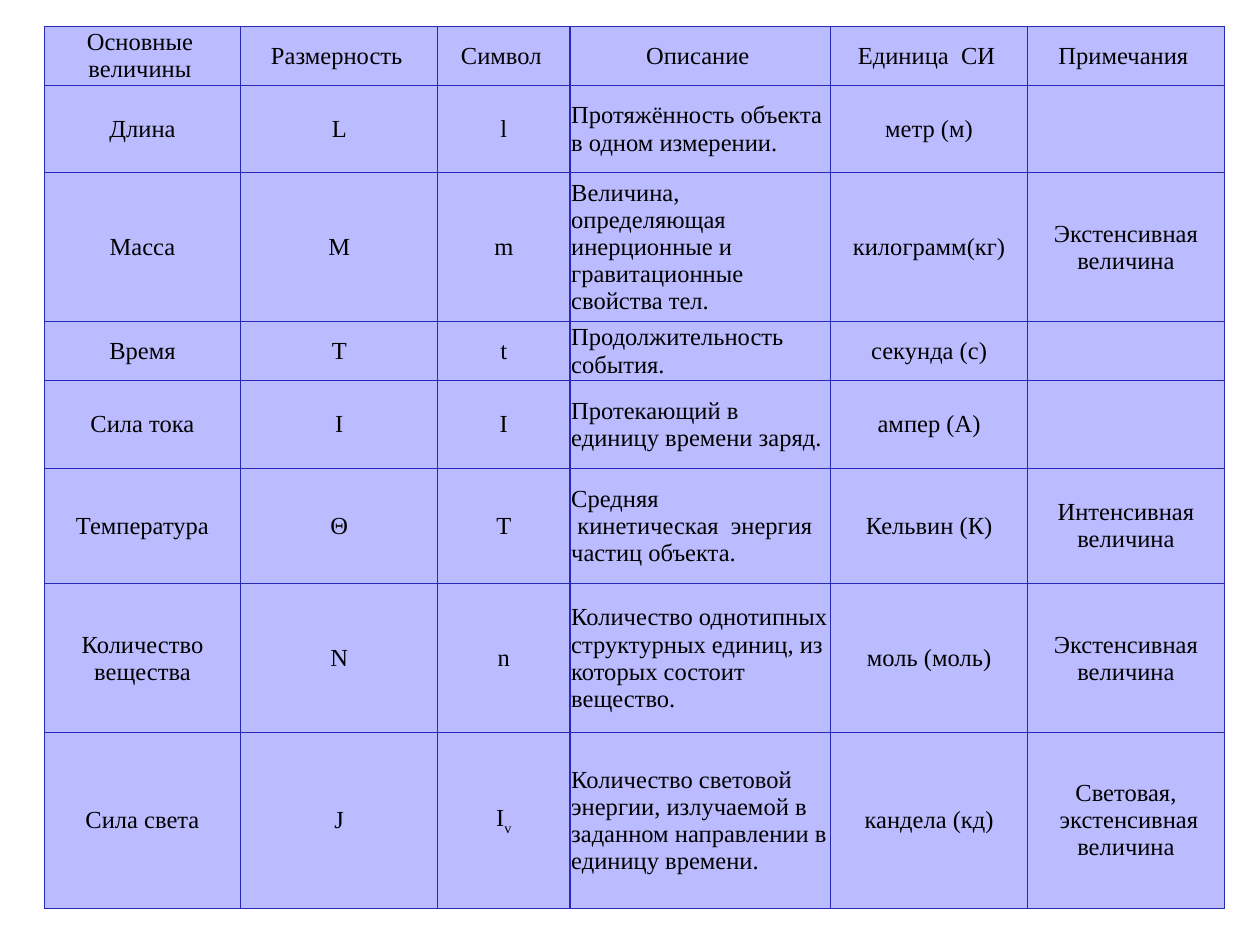
from dataclasses import dataclass

from lxml import etree
from pptx import Presentation
from pptx import util as u
from pptx.dml.color import RGBColor
from pptx.enum import text
from pptx.oxml import ns

SLIDE_WIDTH, SLIDE_HEIGHT = u.Inches(10), u.Inches(7.5)
COLORS = {"cell": "BBBBFF", "border": "2929B8", "text": "000000"}
FONT, FONT_SIZE = "Times New Roman", u.Pt(14)
BORDER_WIDTH = u.Pt(0.75)
MARGIN, HEADER_RIGHT_MARGIN = u.Inches(0.01), u.Inches(0.05)

# Shares of the slide, in percent
TABLE_LEFT, TABLE_TOP = 3.5, 2.8
COLUMN_SHARES = (15.62, 15.62, 10.5, 20.7, 15.62, 15.62)
DESCRIPTION_COLUMN = 3
SYMBOL_COLUMN = 2


@dataclass
class Quantity:
    height_share: float
    name: str
    dimension: str
    symbol: str
    description: str
    unit: str
    note: str = ""
    subscript: str = ""

    def texts(self) -> tuple:
        return (self.name, self.dimension, self.symbol,
                self.description, self.unit, self.note)


# Header, then the seven base quantities; a line break starts a paragraph
QUANTITIES = [
    Quantity(6.25, "Основные величины", "Размерность", "Символ", "Описание",
             "Единица  СИ", "Примечания"),
    Quantity(9.25, "Длина", "L", "l",
             "Протяжённость объекта в одном измерении.", "метр (м)"),
    Quantity(15.75, "Масса", "M", "m",
             "Величина, определяющая инерционные и гравитационные свойства тел.",
             "килограмм(кг)", "Экстенсивная величина"),
    Quantity(6.25, "Время", "T", "t", "Продолжительность события.",
             "секунда (с)"),
    Quantity(9.25, "Сила тока", "I", "I",
             "Протекающий в единицу времени заряд.", "ампер (А)"),
    Quantity(12.25, "Температура", "Θ", "T",
             "Средняя\n кинетическая  энергия частиц объекта.",
             "Кельвин (К)", "Интенсивная величина"),
    Quantity(15.75, "Количество вещества", "N", "n",
             "Количество однотипных структурных единиц, из которых состоит вещество.",
             "моль (моль)", "Экстенсивная величина"),
    Quantity(18.6, "Сила света", "J", "I",
             "Количество световой энергии, излучаемой в заданном направлении в единицу времени.",
             "кандела (кд)", "Световая,\n экстенсивная величина", subscript="v"),
]


def across(percent: float) -> int:
    return round(SLIDE_WIDTH * percent / 100)


def down(percent: float) -> int:
    return round(SLIDE_HEIGHT * percent / 100)


def add_borders(cell) -> None:
    properties = cell._tc.get_or_add_tcPr()
    for side in ("a:lnL", "a:lnR", "a:lnT", "a:lnB"):
        line = etree.SubElement(properties, ns.qn(side), w=str(BORDER_WIDTH))
        fill = etree.SubElement(line, ns.qn("a:solidFill"))
        etree.SubElement(fill, ns.qn("a:srgbClr"), val=COLORS["border"])


def format_cell(cell, right_margin: int) -> None:
    add_borders(cell)
    cell.fill.solid()
    cell.fill.fore_color.rgb = RGBColor.from_string(COLORS["cell"])
    cell.margin_left = cell.margin_top = cell.margin_bottom = MARGIN
    cell.margin_right = right_margin
    cell.vertical_anchor = text.MSO_ANCHOR.MIDDLE


def write_cell(cell, content: str, alignment, subscript: str = "") -> None:
    cell.text_frame.text = content
    if subscript:
        index = cell.text_frame.paragraphs[-1].add_run()
        index.text = subscript
        index.font._element.set("baseline", "-25000")
    for paragraph in cell.text_frame.paragraphs:
        paragraph.alignment = alignment
        paragraph.font.name = FONT
        paragraph.font.size = FONT_SIZE
        paragraph.font.color.rgb = RGBColor.from_string(COLORS["text"])


def add_quantity_table(slide, quantities: list) -> None:
    table = slide.shapes.add_table(
        len(quantities), len(COLUMN_SHARES), across(TABLE_LEFT), down(TABLE_TOP),
        across(sum(COLUMN_SHARES)),
        down(sum(quantity.height_share for quantity in quantities))).table
    table.horz_banding = False
    table.first_row = False
    for column, share in zip(table.columns, COLUMN_SHARES):
        column.width = across(share)

    for row, quantity in enumerate(quantities):
        is_header = row == 0
        table.rows[row].height = down(quantity.height_share)
        for column, content in enumerate(quantity.texts()):
            cell = table.cell(row, column)
            format_cell(cell, HEADER_RIGHT_MARGIN if is_header else MARGIN)
            is_description = column == DESCRIPTION_COLUMN and not is_header
            write_cell(
                cell, content,
                text.PP_ALIGN.LEFT if is_description else text.PP_ALIGN.CENTER,
                quantity.subscript if column == SYMBOL_COLUMN else "")


def main() -> None:
    presentation = Presentation()
    presentation.slide_width, presentation.slide_height = SLIDE_WIDTH, SLIDE_HEIGHT
    slide = presentation.slides.add_slide(presentation.slide_layouts[6])
    add_quantity_table(slide, QUANTITIES)
    presentation.save("out.pptx")


if __name__ == "__main__":
    main()
